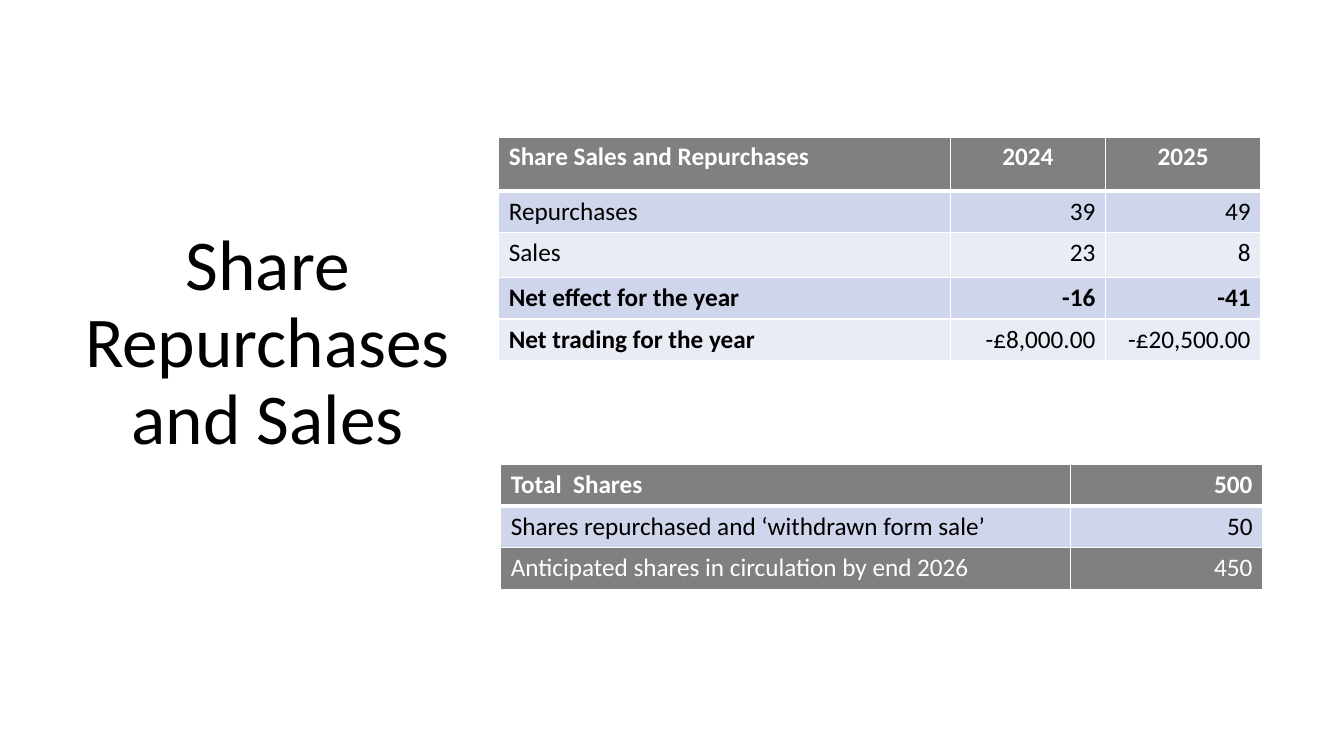
from dataclasses import dataclass

from lxml import etree
from pptx import Presentation
from pptx.dml.color import RGBColor
from pptx.enum import text
from pptx.oxml import ns
from pptx.util import Cm, Pt


@dataclass(frozen=True)
class Theme:
    """Hold the colours, font and sizes of the slide."""
    font: str = "Calibri"
    title_size: int = 51
    table_size: int = 18
    dark: str = "808080"
    band: str = "CFD5EA"
    pale: str = "E9EBF5"
    white: str = "FFFFFF"
    black: str = "000000"
    rule: int = 1
    header_rule: int = 3


THEME = Theme()
LEFT, CENTER, RIGHT = text.PP_ALIGN.LEFT, text.PP_ALIGN.CENTER, text.PP_ALIGN.RIGHT


def style(paragraph, size, colour, align, bold=False):
    """Set the font and alignment of a paragraph."""
    paragraph.alignment = align
    font = paragraph.font
    font.name, font.size, font.bold = THEME.font, Pt(size), bold
    font.color.rgb = RGBColor.from_string(colour)


def add_title(slide, wording, left, top, width, height):
    """Add the bottom-anchored slide title."""
    frame = slide.shapes.add_textbox(left, top, width, height).text_frame
    frame.word_wrap = True
    frame.vertical_anchor = text.MSO_ANCHOR.BOTTOM
    heading = frame.paragraphs[0]
    heading.text = wording
    heading.line_spacing = 0.9
    style(heading, THEME.title_size, THEME.black, CENTER)


def add_borders(cell, row):
    """Rule a cell in white, with a thicker line below the header."""
    properties = cell._tc.get_or_add_tcPr()
    thick = {(0, "lnB"), (1, "lnT")}
    for side in ("lnL", "lnR", "lnT", "lnB"):
        points = THEME.header_rule if (row, side) in thick else THEME.rule
        line = etree.SubElement(properties, ns.qn(f"a:{side}"), w=str(Pt(points)))
        fill = etree.SubElement(line, ns.qn("a:solidFill"))
        etree.SubElement(fill, ns.qn("a:srgbClr"), val=THEME.white)


def add_share_table(slide, left, top, widths, heights, rows, fills, bold, year_align):
    """Add a table of share figures with labels in the first column."""
    table = slide.shapes.add_table(
        len(rows), len(widths), left, top, sum(widths), sum(heights)).table
    for column, width in zip(table.columns, widths):
        column.width = width
    for r, (figures, height, fill) in enumerate(zip(rows, heights, fills)):
        table.rows[r].height = height
        colour = THEME.white if fill == THEME.dark else THEME.black
        for c, figure in enumerate(figures):
            cell = table.cell(r, c)
            add_borders(cell, r)
            cell.fill.solid()
            cell.fill.fore_color.rgb = RGBColor.from_string(fill)
            cell.text = figure
            align = LEFT if c == 0 else year_align if r == 0 else RIGHT
            style(cell.text_frame.paragraphs[0], THEME.table_size, colour, align,
                  r == 0 or (r, c) in bold)


def main():
    """Build the share slide and save it."""
    deck = Presentation()
    deck.slide_width, deck.slide_height = Cm(33.87), Cm(19.05)
    slide = deck.slides.add_slide(deck.slide_layouts[6])
    add_title(slide, "Share Repurchases and Sales", Cm(1.78), Cm(1.78), Cm(9.93), Cm(9.93))
    add_share_table(
        slide, Cm(12.62), Cm(11.71), [Cm(14.35), Cm(4.85)],
        [Cm(1.04), Cm(1.04), Cm(1.07)],
        [("Total  Shares", "500"),
         ("Shares repurchased and ‘withdrawn form sale’", "50"),
         ("Anticipated shares in circulation by end 2026", "450")],
        [THEME.dark, THEME.band, THEME.dark], set(), RIGHT)
    add_share_table(
        slide, Cm(12.57), Cm(3.45), [Cm(11.38), Cm(3.91), Cm(3.91)],
        [Cm(1.37), Cm(1.04), Cm(1.14), Cm(1.04), Cm(1.04)],
        [("Share Sales and Repurchases", "2024", "2025"),
         ("Repurchases", "39", "49"),
         ("Sales", "23", "8"),
         ("Net effect for the year", "-16", "-41"),
         ("Net trading for the year", "-£8,000.00", "-£20,500.00")],
        [THEME.dark] + [THEME.band, THEME.pale] * 2,
        {(3, 0), (3, 1), (3, 2), (4, 0)}, CENTER)
    deck.save("out.pptx")


if __name__ == "__main__":
    main()
